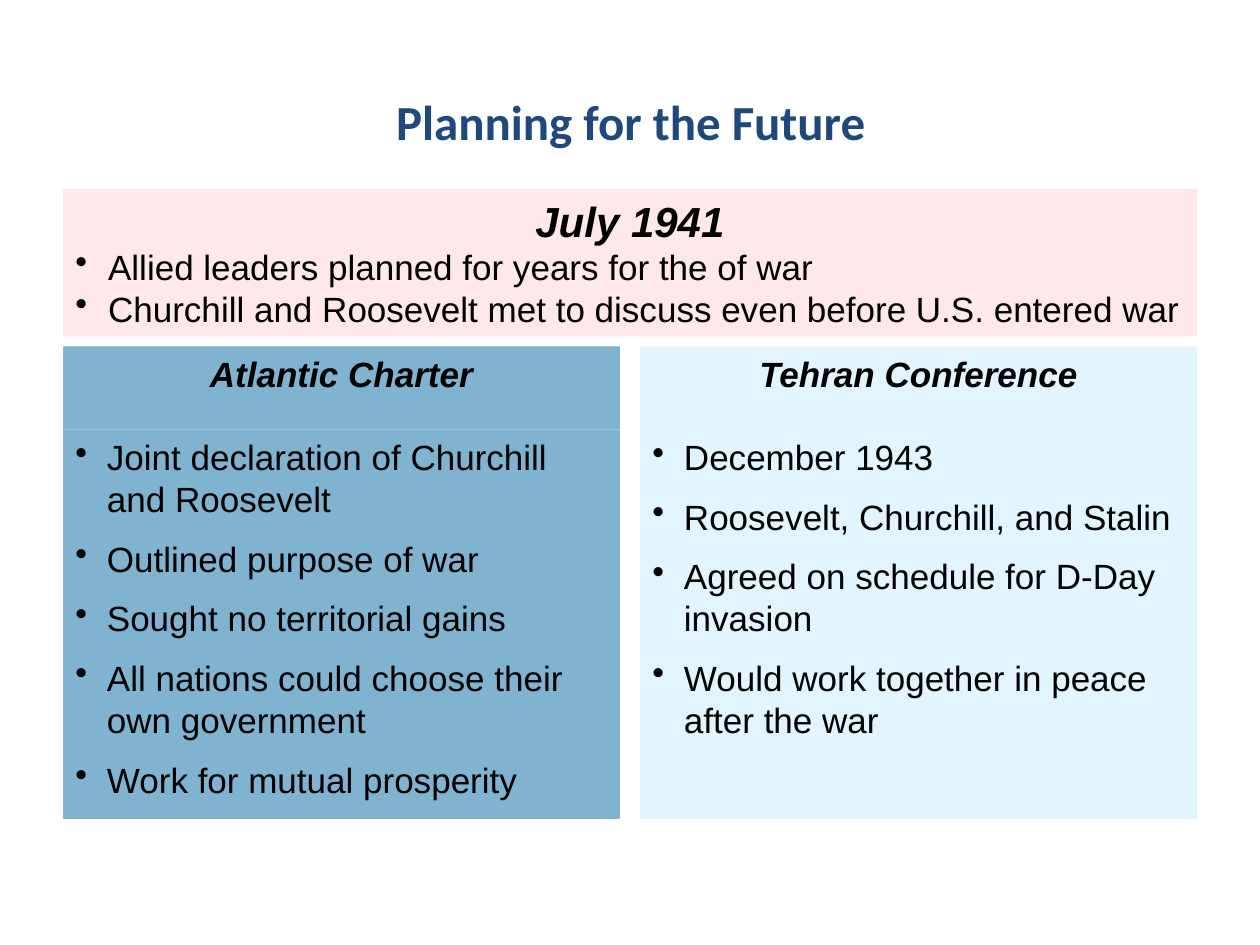
from lxml.etree import SubElement
from pptx import Presentation
from pptx.dml.color import RGBColor
from pptx.enum.shapes import MSO_SHAPE as Shape
from pptx.enum.text import MSO_ANCHOR as Anchor, MSO_AUTO_SIZE as AutoSize, PP_ALIGN as Align
from pptx.oxml.ns import qn
from pptx.util import Inches, Pt

LEFT, WIDTH, GAP = 0.5, 9, 0.16
COLUMN_WIDTH = (WIDTH - GAP) / 2
HEADING_TOP, HEADING_HEIGHT, BODY_HEIGHT = 2.75, 0.66, 3.09

COLUMNS = [
    ("Atlantic Charter", "80B3D0", [
        "Joint declaration of Churchill and Roosevelt",
        "Outlined purpose of war",
        "Sought no territorial gains",
        "All nations could choose their own government",
        "Work for mutual prosperity",
    ]),
    ("Tehran Conference", "E2F4FE", [
        "December 1943",
        "Roosevelt, Churchill, and Stalin",
        "Agreed on schedule for D-Day invasion",
        "Would work together in peace after the war",
    ]),
]


def color(value):
    return RGBColor.from_string(value)


class SlideBuilder:
    title_font, body_font = "Calibri", "Arial"
    title_color, text_color = "1F497D", "000000"
    body_size = 20

    def __init__(self, slide):
        self.slide = slide

    def set_font(self, paragraph, name, size, value, bold=False, italic=False):
        font = paragraph.font
        font.name, font.size = name, Pt(size)
        font.bold, font.italic = bold, italic
        font.color.rgb = color(value)

    def title(self, text, left, top, width, height):
        title = self.slide.shapes.title
        title.left, title.top = Inches(left), Inches(top)
        title.width, title.height = Inches(width), Inches(height)
        frame = title.text_frame
        frame.text = text
        frame.vertical_anchor = Anchor.MIDDLE
        paragraph = frame.paragraphs[0]
        paragraph.alignment = Align.CENTER
        self.set_font(paragraph, self.title_font, 28, self.title_color, bold=True)

    def panel(self, shapes, left, top, width, height, fill):
        shape = shapes.add_shape(Shape.RECTANGLE, Inches(left), Inches(top),
                                 Inches(width), Inches(height))
        shape.shadow.inherit = False
        shape.fill.solid()
        shape.fill.fore_color.rgb = color(fill)
        shape.line.fill.background()
        frame = shape.text_frame
        frame.word_wrap = True
        frame.vertical_anchor = Anchor.TOP
        return frame

    def heading(self, frame, text, size=body_size):
        paragraph = frame.paragraphs[0]
        paragraph.text = text
        paragraph.alignment = Align.CENTER
        self.set_font(paragraph, self.body_font, size, self.text_color, bold=True, italic=True)

    def bullets(self, frame, items, indent=0.25, space_after=0):
        for item in items:
            first = frame.paragraphs[0]
            paragraph = frame.add_paragraph() if first.text else first
            paragraph.text = item
            paragraph.alignment = Align.LEFT
            paragraph.space_after = Pt(space_after)
            self.set_font(paragraph, self.body_font, self.body_size, self.text_color)
            properties = paragraph._p.get_or_add_pPr()
            properties.set("marL", str(Inches(indent)))
            properties.set("indent", str(-Inches(indent)))
            # The bullet goes before the default run properties
            bullet = SubElement(properties, qn("a:buChar"), char="•")
            properties.find(qn("a:defRPr")).addprevious(bullet)

    def column(self, left, heading, fill, items):
        shapes = self.slide.shapes.add_group_shape().shapes
        body = self.panel(shapes, left, HEADING_TOP + HEADING_HEIGHT,
                          COLUMN_WIDTH, BODY_HEIGHT, fill)
        self.bullets(body, items, space_after=self.body_size / 2)
        top = self.panel(shapes, left, HEADING_TOP, COLUMN_WIDTH, HEADING_HEIGHT, fill)
        self.heading(top, heading)


def main():
    presentation = Presentation()
    presentation.slide_width, presentation.slide_height = Inches(10), Inches(7.5)
    builder = SlideBuilder(presentation.slides.add_slide(presentation.slide_layouts[5]))

    # Title
    builder.title("Planning for the Future", 0.67, 0.67, 8.67, 0.58)

    # Introduction across the full width
    intro = builder.panel(builder.slide.shapes, LEFT, 1.5, WIDTH, 1.17, "FEE8EA")
    intro.auto_size = AutoSize.SHAPE_TO_FIT_TEXT
    builder.heading(intro, "July 1941", size=24)
    builder.bullets(intro, [
        "Allied leaders planned for years for the of war",
        "Churchill and Roosevelt met to discuss even before U.S. entered war",
    ], indent=0.26)

    # Two conferences side by side
    for index, (heading, fill, items) in enumerate(COLUMNS):
        builder.column(LEFT + index * (COLUMN_WIDTH + GAP), heading, fill, items)

    presentation.save("out.pptx")


if __name__ == "__main__":
    main()
